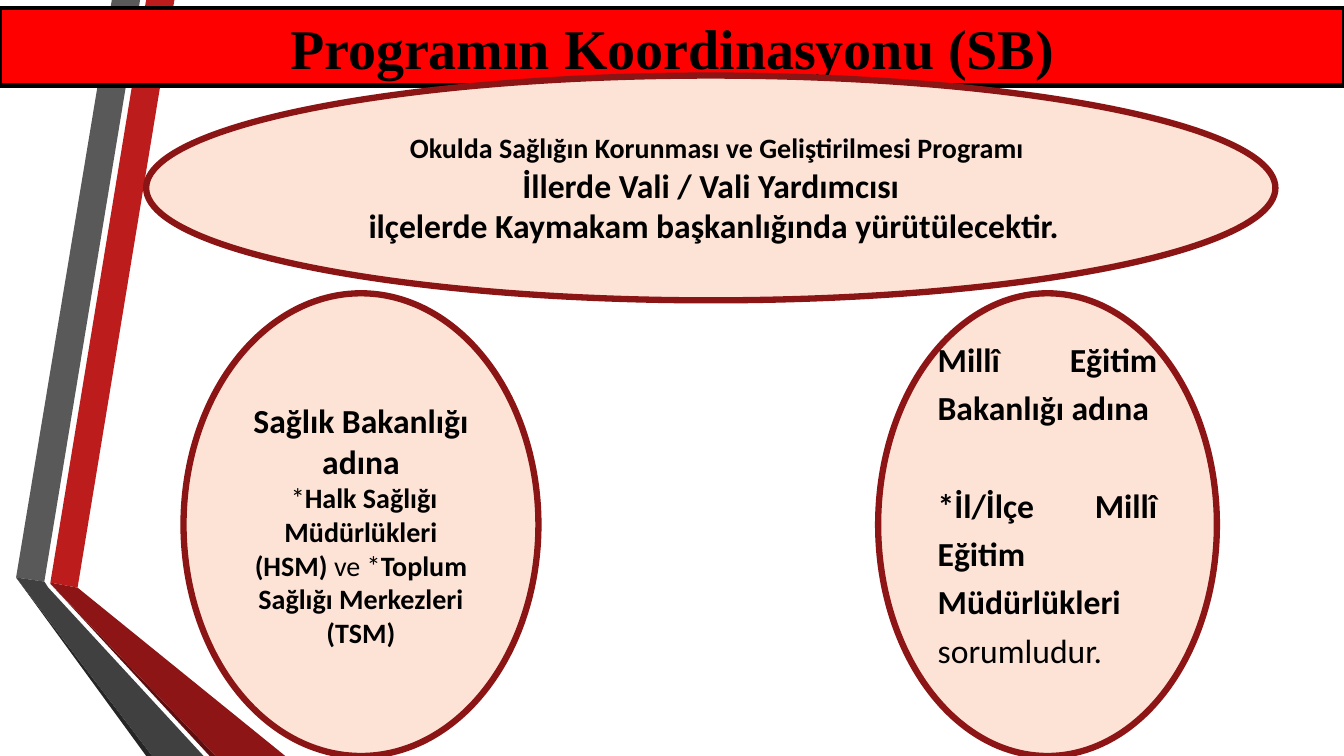
from pptx import Presentation
from pptx.dml.color import RGBColor
from pptx.enum.shapes import MSO_SHAPE
from pptx.enum.text import MSO_ANCHOR, PP_ALIGN
from pptx.util import Inches, Pt

WHITE = RGBColor(0xFF, 0xFF, 0xFF)
BLACK = RGBColor(0x00, 0x00, 0x00)
RED = RGBColor(0xFF, 0x00, 0x00)
PEACH = RGBColor(0xFD, 0xE3, 0xD6)
MAROON = RGBColor(0x8B, 0x15, 0x15)
CRIMSON = RGBColor(0xBC, 0x1C, 0x1C)
DARK_RED = RGBColor(0x8D, 0x15, 0x15)
DEEP_RED = RGBColor(0x5E, 0x0E, 0x0E)
GRAY = RGBColor(0x59, 0x59, 0x59)
DARK_GRAY = RGBColor(0x40, 0x40, 0x40)
CHARCOAL = RGBColor(0x26, 0x26, 0x26)

RIBBONS = [
    (CRIMSON, [(0.5, 5.78), (0.77, 5.83), (1.73, 0), (1.45, 0)]),
    (GRAY, [(1.39, 0), (1.11, 0), (0.16, 5.73), (0.44, 5.77)]),
    (CHARCOAL, [(0.16, 5.73), (1.45, 7.5), (1.51, 7.5)]),
    (DEEP_RED, [(0.5, 5.79), (2.08, 7.5), (2.14, 7.5)]),
    (DARK_RED, [(0.5, 5.79), (2.14, 7.5), (2.83, 7.5), (0.77, 5.83), (0.5, 5.78)]),
    (DARK_GRAY, [(2.02, 7.5), (0.48, 5.83), (0.44, 5.77), (0.16, 5.73), (1.51, 7.5)]),
]


class SlideBuilder:
    font = "Calibri"
    title_font = "Times New Roman"

    def __init__(self, slide):
        self.slide = slide
        fill = slide.background.fill
        fill.solid()
        fill.fore_color.rgb = WHITE

    def ribbon(self, color, points):
        corners = [(Inches(x), Inches(y)) for x, y in points]
        builder = self.slide.shapes.build_freeform(*corners[0])
        builder.add_line_segments(corners[1:], close=True)
        shape = builder.convert_to_shape()
        shape.shadow.inherit = False
        shape.fill.solid()
        shape.fill.fore_color.rgb = color
        shape.line.fill.background()

    def box(self, kind, left, top, width, height, fill, line, line_width):
        shape = self.slide.shapes.add_shape(
            kind, Inches(left), Inches(top), Inches(width), Inches(height))
        shape.shadow.inherit = False
        shape.fill.solid()
        shape.fill.fore_color.rgb = fill
        shape.line.color.rgb = line
        shape.line.width = Pt(line_width)
        frame = shape.text_frame
        frame.word_wrap = True
        frame.vertical_anchor = MSO_ANCHOR.MIDDLE
        return frame

    def oval(self, left, top, width, height, line=MAROON):
        return self.box(MSO_SHAPE.OVAL, left, top, width, height, PEACH, line, 4.5)

    def banner(self, text):
        frame = self.box(MSO_SHAPE.RECTANGLE, 0, 0.08, 13.33, 0.77, RED, BLACK, 3)
        self.paragraph(frame, 40, [(text, True)], font=self.title_font)

    def paragraph(self, frame, size, runs, align=PP_ALIGN.CENTER, font=None, indent=0):
        first = frame.paragraphs[0]
        paragraph = frame.add_paragraph() if first.runs else first
        paragraph.alignment = align
        if indent:
            paragraph._p.get_or_add_pPr().set("marL", str(Inches(indent)))
        for text, bold in runs:
            run = paragraph.add_run()
            run.text = text
            run.font.name = font or self.font
            run.font.size = Pt(size)
            run.font.bold = bold
            run.font.color.rgb = BLACK
        return paragraph


def main():
    presentation = Presentation()
    presentation.slide_width = Inches(13.33)
    presentation.slide_height = Inches(7.5)
    builder = SlideBuilder(presentation.slides.add_slide(presentation.slide_layouts[6]))

    for color, points in RIBBONS:
        builder.ribbon(color, points)
    builder.banner("Programın Koordinasyonu (SB)")

    program = builder.oval(1.45, 0.75, 11.2, 2.23)
    for size, text, indent in [
        (20, "Okulda Sağlığın Korunması ve Geliştirilmesi Programı", 0.12),
        (24, "İllerde Vali / Vali Yardımcısı", 0),
        (24, "ilçelerde Kaymakam başkanlığında yürütülecektir.", 0.06),
    ]:
        builder.paragraph(program, size, [(text, True)], indent=indent)

    health = builder.oval(1.82, 2.91, 3.52, 4.59)
    builder.paragraph(health, 24, [("Sağlık Bakanlığı adına", True)])
    builder.paragraph(health, 20, [
        (" *", False),
        ("Halk Sağlığı Müdürlükleri (HSM) ", True),
        ("ve *", False),
        ("Toplum Sağlığı Merkezleri (TSM)", True),
    ])

    education = builder.oval(8.71, 2.91, 3.36, 4.59, DARK_RED)
    education.margin_bottom = Inches(0.53)
    ministry = builder.paragraph(
        education, 24, [("Millî Eğitim Bakanlığı adına", True)], PP_ALIGN.JUSTIFY)
    ministry.space_after = Pt(35)
    directorates = builder.paragraph(
        education, 24,
        [("*İl/İlçe Millî Eğitim Müdürlükleri ", True), ("sorumludur.", False)],
        PP_ALIGN.JUSTIFY)
    for paragraph in (ministry, directorates):
        paragraph.line_spacing = 1.2

    presentation.save("out.pptx")


if __name__ == "__main__":
    main()
